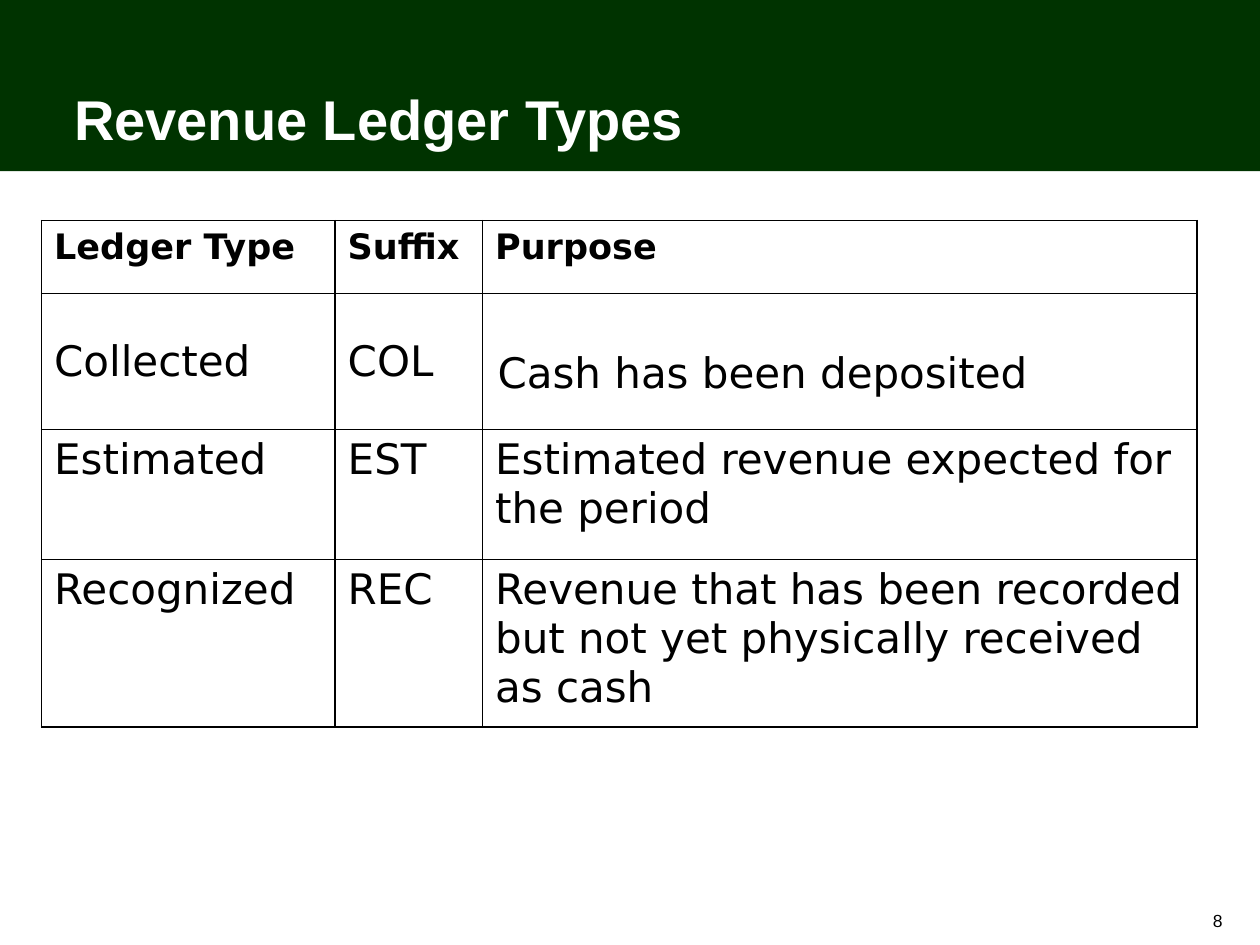
from lxml import etree
from pptx import Presentation
from pptx.dml.color import RGBColor
from pptx.enum import shapes, text
from pptx.oxml import ns
from pptx.util import Inches, Pt

GREEN = RGBColor(0x00, 0x33, 0x00)
WHITE = RGBColor(0xFF, 0xFF, 0xFF)
BLACK = RGBColor(0x00, 0x00, 0x00)

COLUMN_WIDTHS = [2.33, 1.17, 5.67]
ROW_HEIGHTS = [0.58, 1.08, 1.03, 1.33]
LEDGERS = [
    ["Ledger Type", "Suffix", "Purpose"],
    ["Collected", "COL", "Cash has been deposited"],
    ["Estimated", "EST", "Estimated revenue expected for the period"],
    ["Recognized", "REC", "Revenue that has been recorded but not yet physically received as cash"],
]


def add_span(para, words, size, color, font, bold=False):
    span = para.add_run()
    span.text = words
    span.font.size = Pt(size)
    span.font.name = font
    span.font.bold = bold
    span.font.color.rgb = color


def add_label(page, left, top, width, height, words, size, color, align, bold=False):
    box = page.shapes.add_textbox(Inches(left), Inches(top), Inches(width), Inches(height))
    frame = box.text_frame
    frame.word_wrap = True
    frame.vertical_anchor = text.MSO_ANCHOR.BOTTOM
    para = frame.paragraphs[0]
    para.alignment = align
    add_span(para, words, size, color, "Arial", bold)


def add_header(page, left, top, width, height):
    band = page.shapes.add_shape(
        shapes.MSO_SHAPE.RECTANGLE, Inches(left), Inches(top), Inches(width), Inches(height))
    band.shadow.inherit = False
    band.fill.solid()
    band.fill.fore_color.rgb = GREEN
    band.line.fill.background()
    add_label(page, left + 0.49, top, 6.87, height - 0.11, "Revenue Ledger Types",
              32, WHITE, text.PP_ALIGN.LEFT, bold=True)


def set_borders(cell):
    properties = cell._tc.get_or_add_tcPr()
    for position, side in enumerate(("lnL", "lnR", "lnT", "lnB")):
        line = etree.Element(ns.qn(f"a:{side}"), w=str(Pt(1)))
        fill = etree.SubElement(line, ns.qn("a:solidFill"))
        etree.SubElement(fill, ns.qn("a:srgbClr"), val=str(BLACK))
        properties.insert(position, line)


def add_ledger_table(page, left, top, width, height):
    table = page.shapes.add_table(
        len(LEDGERS), len(COLUMN_WIDTHS),
        Inches(left), Inches(top), Inches(width), Inches(height)).table
    table.horz_banding = False
    for column, column_width in zip(table.columns, COLUMN_WIDTHS):
        column.width = Inches(column_width)
    for row, row_height, entries in zip(table.rows, ROW_HEIGHTS, LEDGERS):
        row.height = Inches(row_height)
        heading = entries is LEDGERS[0]
        for cell, words in zip(row.cells, entries):
            cell.fill.solid()
            cell.fill.fore_color.rgb = WHITE
            add_span(cell.text_frame.paragraphs[0], words, 20 if heading else 24,
                     BLACK, "DejaVu Sans", heading)
            set_borders(cell)
    for column in range(2):
        table.cell(1, column).vertical_anchor = text.MSO_ANCHOR.MIDDLE
    deposit = table.cell(1, 2)
    deposit.margin_left = Inches(0.12)
    deposit.margin_top = Inches(0.44)


def build_slide(deck):
    page = deck.slides.add_slide(deck.slide_layouts[6])
    add_header(page, 0, 0, 10, 1.36)
    add_ledger_table(page, 0.33, 1.75, sum(COLUMN_WIDTHS), sum(ROW_HEIGHTS))
    add_label(page, 7.95, 7.14, 1.85, 0.3, "8", 10, BLACK, text.PP_ALIGN.RIGHT)


def main():
    deck = Presentation()
    deck.slide_width = Inches(10)
    deck.slide_height = Inches(7.5)
    build_slide(deck)
    deck.save("out.pptx")


if __name__ == "__main__":
    main()
